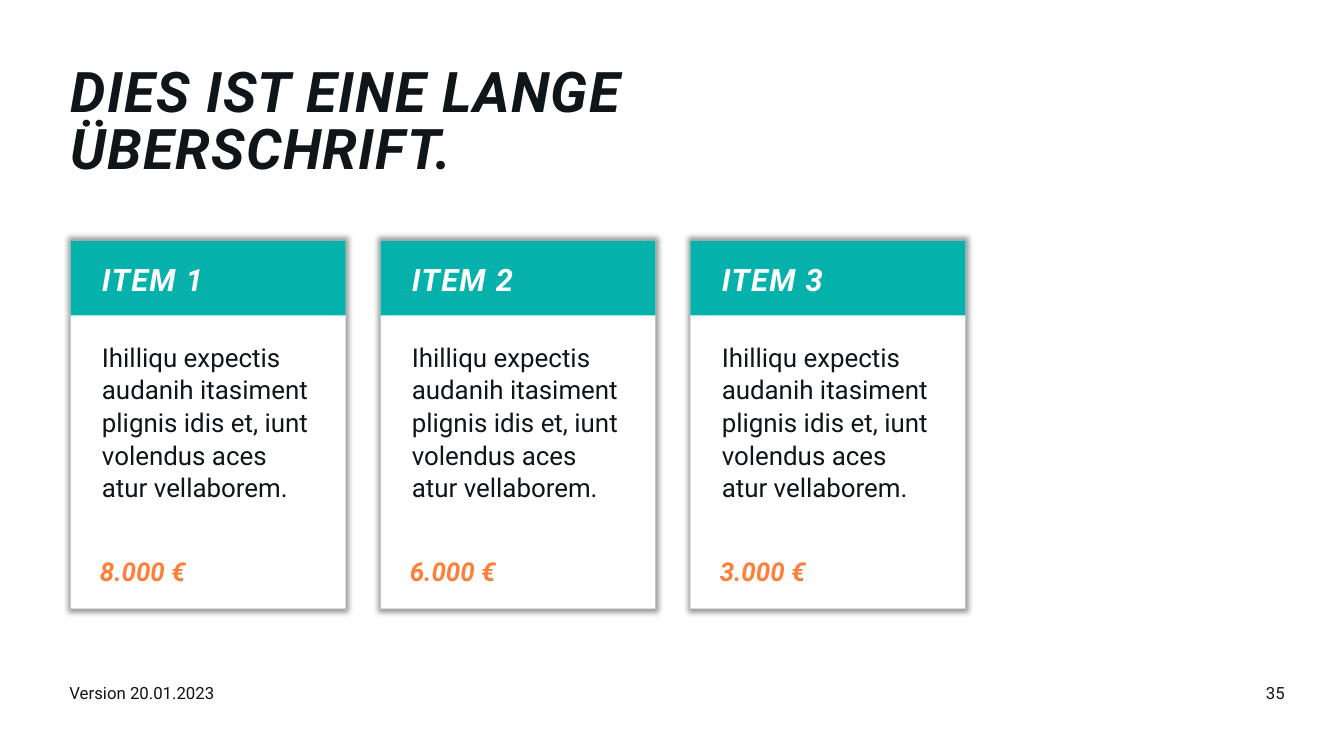
from dataclasses import dataclass

from lxml.etree import SubElement
from pptx import Presentation
from pptx.dml.color import RGBColor
from pptx.enum.shapes import MSO_SHAPE as Shape
from pptx.enum.text import MSO_ANCHOR as Anchor, MSO_AUTO_SIZE as AutoSize, PP_ALIGN as Align
from pptx.oxml.ns import qn
from pptx.util import Cm, Pt


@dataclass(frozen=True)
class Theme:
    font: str = "Roboto"
    ink: str = "10151A"
    white: str = "FFFFFF"
    teal: str = "04B2AB"
    orange: str = "FF7E39"
    shadow: str = "000000"
    title_size: float = 40
    header_size: float = 22
    body_size: float = 18.5
    footer_size: float = 12


THEME = Theme()

MARGIN = 1.78
CARD_TOP, CARD_WIDTH, CARD_HEIGHT, CARD_PITCH = 6.07, 6.93, 9.27, 7.81
HEADER_HEIGHT = 1.88
CARD_TEXT = (
    "Ihilliqu expectis audanih itasiment plignis idis et, iunt volendus aces",
    "atur vellaborem.",
)
CARDS = (("ITEM 1", "8.000 €"), ("ITEM 2", "6.000 €"), ("ITEM 3", "3.000 €"))


def write(shape, lines, size, color=THEME.ink, emphasis=False, spacing=1.0,
          tracking=0, align=Align.LEFT, anchor=Anchor.TOP, insets=(0, 0, 0, 0)):
    """Fill a shape with paragraphs; insets are left, top, right, bottom in cm."""
    frame = shape.text_frame
    frame.word_wrap = True
    frame.auto_size = AutoSize.NONE
    frame.vertical_anchor = anchor
    (frame.margin_left, frame.margin_top,
     frame.margin_right, frame.margin_bottom) = map(Cm, insets)
    frame.text = "\n".join(lines)
    for paragraph in frame.paragraphs:
        paragraph.alignment = align
        paragraph.line_spacing = spacing
        paragraph.space_before = Pt(0)
        font = paragraph.font
        font.name = THEME.font
        font.size = Pt(size)
        font.bold = font.italic = emphasis
        font.color.rgb = RGBColor.from_string(color)
        if tracking:
            paragraph._p.pPr.find(qn("a:defRPr")).set("spc", str(tracking * 100))


def add_text(slide, left, top, width, height, text, size, **style):
    box = slide.shapes.add_textbox(Cm(left), Cm(top), Cm(width), Cm(height))
    write(box, [text], size, **style)


def add_panel(slide, left, height, fill):
    panel = slide.shapes.add_shape(
        Shape.RECTANGLE, Cm(left), Cm(CARD_TOP), Cm(CARD_WIDTH), Cm(height))
    panel.shadow.inherit = False
    panel.fill.solid()
    panel.fill.fore_color.rgb = RGBColor.from_string(fill)
    panel.line.fill.background()
    return panel


def add_soft_shadow(shape):
    """Give the shape a blurred shadow, slightly larger than itself."""
    effects = shape._element.spPr.find(qn("a:effectLst"))
    shadow = SubElement(effects, qn("a:outerShdw"), blurRad=str(Pt(4)), dist="0",
                        sx="102000", sy="102000", algn="ctr", rotWithShape="0")
    color = SubElement(shadow, qn("a:srgbClr"), val=THEME.shadow)
    SubElement(color, qn("a:alpha"), val="40000")


def add_card(slide, left, heading, price):
    body = add_panel(slide, left, CARD_HEIGHT, THEME.white)
    add_soft_shadow(body)
    write(body, CARD_TEXT, THEME.body_size, spacing=1.05, insets=(0.79, 2.49, 0.71, 0))
    header = add_panel(slide, left, HEADER_HEIGHT, THEME.teal)
    write(header, [heading], THEME.header_size, color=THEME.white, emphasis=True,
          spacing=1.05, tracking=1, anchor=Anchor.MIDDLE, insets=(0.79, 0.3, 0.3, 0.3))
    add_text(slide, left + 0.74, 13.97, 5.61, 0.66, price, THEME.body_size,
             color=THEME.orange, emphasis=True, spacing=1.05)


def set_title(slide, text):
    title = slide.shapes.title
    title.left, title.top, title.width, title.height = map(Cm, (MARGIN, 1.68, 20.83, 2.84))
    write(title, [text], THEME.title_size, emphasis=True, spacing=0.85, tracking=1)


def add_footer(slide, version, number):
    add_text(slide, 1.75, 17.2, 20.9, 1.02, version, THEME.footer_size)
    add_text(slide, 26.92, 17.2, 5.46, 1.02, number, THEME.footer_size, align=Align.RIGHT)


def main():
    presentation = Presentation()
    presentation.slide_width, presentation.slide_height = Cm(33.87), Cm(19.05)
    slide = presentation.slides.add_slide(presentation.slide_layouts[5])
    set_title(slide, "DIES IST EINE LANGE ÜBERSCHRIFT.")
    for index, (heading, price) in enumerate(CARDS):
        add_card(slide, MARGIN + index * CARD_PITCH, heading, price)
    add_footer(slide, "Version 20.01.2023", "35")
    presentation.save("out.pptx")


if __name__ == "__main__":
    main()
